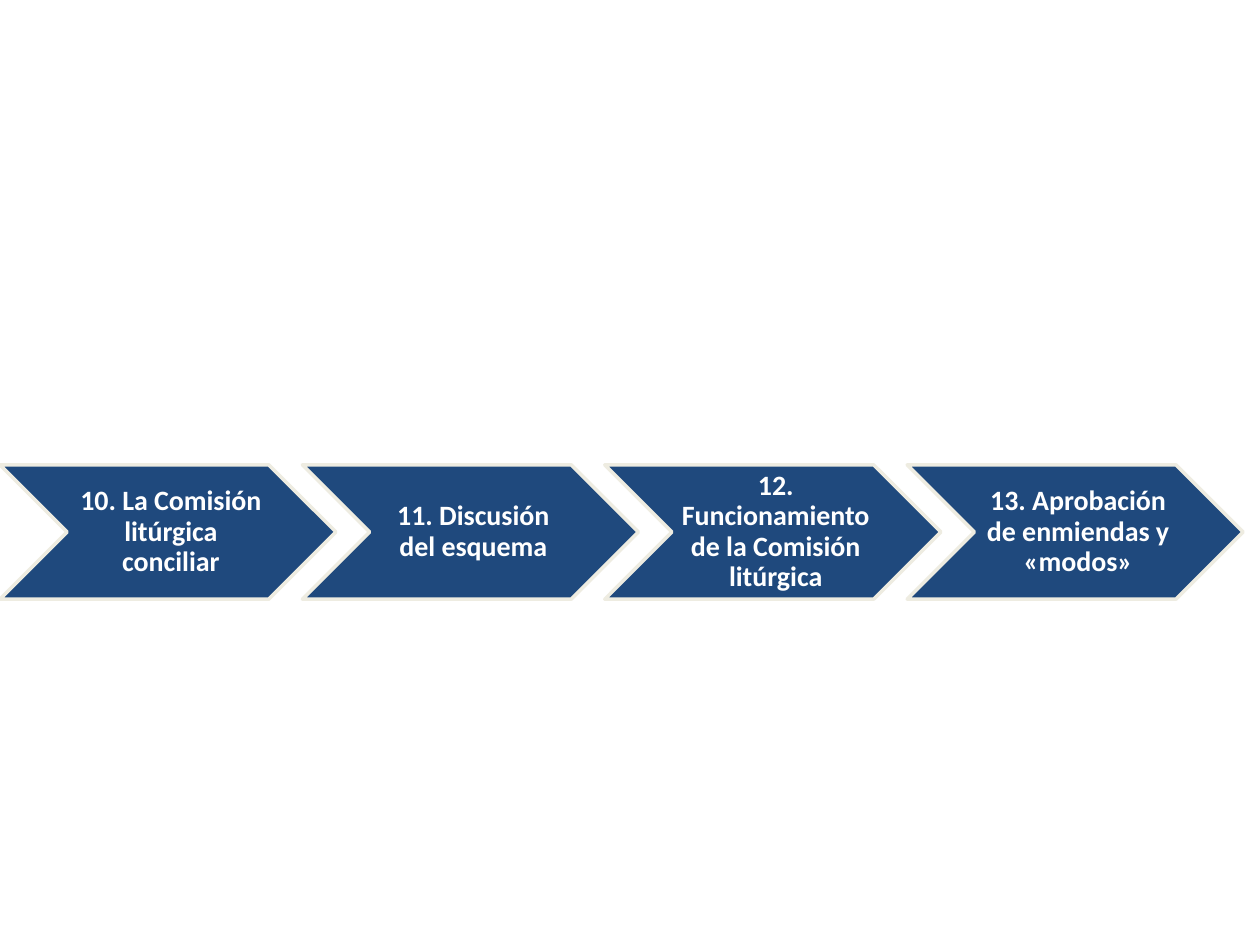
import pptx
import pptx.dml.color
import pptx.enum.shapes
import pptx.enum.text
import pptx.util

Pt = pptx.util.Pt
NAVY = pptx.dml.color.RGBColor(0x1F, 0x49, 0x7D)
CREAM = pptx.dml.color.RGBColor(0xEE, 0xEC, 0xE1)
WHITE = pptx.dml.color.RGBColor(0xFF, 0xFF, 0xFF)

STEP_WIDTH, STEP_HEIGHT = 192, 76.8
STEP_TOP = 265.6
STEP_PITCH = STEP_WIDTH * 0.9

STEPS = [
    "10. La Comisión litúrgica conciliar",
    "11. Discusión del esquema",
    "12. Funcionamiento de la Comisión litúrgica",
    "13. Aprobación de enmiendas y «modos»",
]

deck = pptx.Presentation()
deck.slide_width = Pt(720)
deck.slide_height = Pt(540)
slide = deck.slides.add_slide(deck.slide_layouts[6])

for index, wording in enumerate(STEPS):
    step = slide.shapes.add_shape(
        pptx.enum.shapes.MSO_SHAPE.CHEVRON,
        Pt(index * STEP_PITCH), Pt(STEP_TOP), Pt(STEP_WIDTH), Pt(STEP_HEIGHT),
    )
    step.shadow.inherit = False
    step.fill.solid()
    step.fill.fore_color.rgb = NAVY
    step.line.color.rgb = CREAM
    step.line.width = Pt(2)

    label = step.text_frame
    label.word_wrap = True
    label.vertical_anchor = pptx.enum.text.MSO_ANCHOR.MIDDLE
    label.margin_left = Pt(5)
    label.margin_right = label.margin_top = label.margin_bottom = Pt(1.6)

    paragraph = label.paragraphs[0]
    paragraph.alignment = pptx.enum.text.PP_ALIGN.CENTER
    paragraph.line_spacing = 0.9
    run = paragraph.add_run()
    run.text = wording
    run.font.name = "Calibri"
    run.font.size = Pt(16)
    run.font.bold = True
    run.font.color.rgb = WHITE

deck.save("out.pptx")
